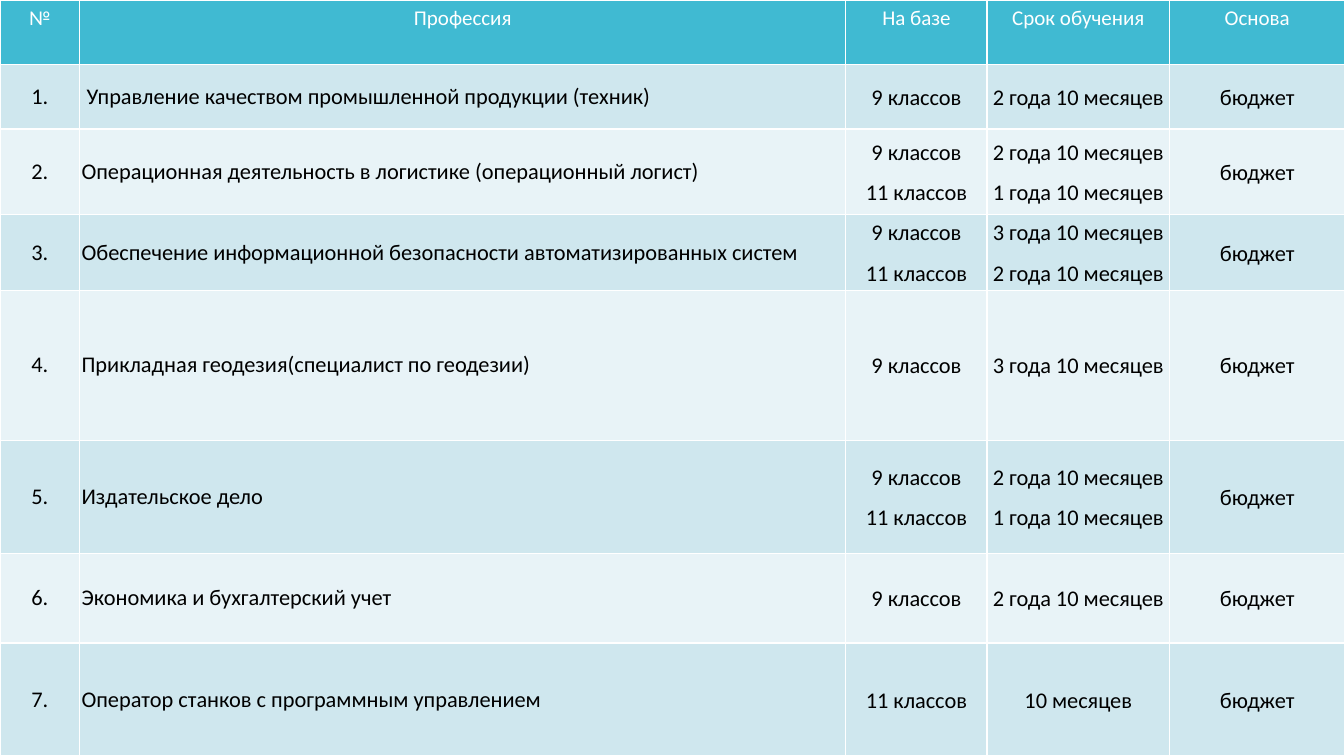
from lxml import etree
from pptx import Presentation
from pptx.dml.color import RGBColor
from pptx.enum.text import MSO_ANCHOR, PP_ALIGN
from pptx.oxml.ns import qn
from pptx.util import Inches, Pt

LEFT, CENTER = PP_ALIGN.LEFT, PP_ALIGN.CENTER
TOP, MIDDLE = MSO_ANCHOR.TOP, MSO_ANCHOR.MIDDLE
WHITE = RGBColor(0xFF, 0xFF, 0xFF)
BLACK = RGBColor(0x00, 0x00, 0x00)
HEADER_TEAL = RGBColor(0x40, 0xBA, 0xD2)
BANDS = (RGBColor(0xCF, 0xE7, 0xEE), RGBColor(0xE8, 0xF3, 0xF7))

COLUMN_WIDTHS = (0.79, 7.6, 1.4, 1.81, 1.74)
ROW_HEIGHTS = (0.64, 0.64, 0.85, 0.75, 1.49, 1.12, 0.89, 1.12)
# Alignment, cell margin (None keeps the default), paragraph format
COLUMN_FORMATS = (
    (CENTER, None, {}),
    (LEFT, 0.02, {}),
) + ((CENTER, 0, {"line_spacing": 1.07, "space_after": Pt(8)}),) * 3

HEADINGS = ("№", "Профессия", "На базе", "Срок обучения", "Основа")
PROGRAMMES = (
    (" Управление качеством промышленной продукции (техник)",
     "9 классов", "2 года 10 месяцев"),
    ("Операционная деятельность в логистике (операционный логист)",
     "9 классов\n11 классов", "2 года 10 месяцев\n1 года 10 месяцев"),
    ("Обеспечение информационной безопасности автоматизированных систем",
     "9 классов\n11 классов", "3 года 10 месяцев\n2 года 10 месяцев"),
    ("Прикладная геодезия(специалист по геодезии)",
     "9 классов", "3 года 10 месяцев"),
    ("Издательское дело",
     "9 классов\n11 классов", "2 года 10 месяцев\n1 года 10 месяцев"),
    ("Экономика и бухгалтерский учет", "9 классов", "2 года 10 месяцев"),
    ("Оператор станков с программным управлением",
     "11 классов", "10 месяцев"),
)


def add_borders(cell):
    properties = cell._tc.get_or_add_tcPr()
    for side in ("lnL", "lnR", "lnT", "lnB"):
        line = etree.SubElement(properties, qn(f"a:{side}"), w=str(Pt(1)))
        fill = etree.SubElement(line, qn("a:solidFill"))
        etree.SubElement(fill, qn("a:srgbClr"), val=str(WHITE))


def fill_cell(cell, text, background, anchor, alignment, font_format,
              margin=None, paragraph_format=None):
    add_borders(cell)
    cell.fill.solid()
    cell.fill.fore_color.rgb = background
    cell.vertical_anchor = anchor
    if margin is not None:
        for side in ("left", "right", "top", "bottom"):
            setattr(cell, f"margin_{side}", Inches(margin))
    cell.text_frame.text = text
    for paragraph in cell.text_frame.paragraphs:
        paragraph.alignment = alignment
        for name, value in (paragraph_format or {}).items():
            setattr(paragraph, name, value)
        font = paragraph.runs[0].font
        font.name = "Calibri"
        font.size, font.color.rgb = font_format


# Slide
presentation = Presentation()
presentation.slide_width = Inches(13.33)
presentation.slide_height = Inches(7.5)
slide = presentation.slides.add_slide(presentation.slide_layouts[6])

# Table grid over the whole slide
programme_table = slide.shapes.add_table(
    len(ROW_HEIGHTS), len(COLUMN_WIDTHS), 0, 0,
    presentation.slide_width, presentation.slide_height).table
for column, width in zip(programme_table.columns, COLUMN_WIDTHS):
    column.width = Inches(width)
for row, height in zip(programme_table.rows, ROW_HEIGHTS):
    row.height = Inches(height)

# Header row
for index, heading in enumerate(HEADINGS):
    fill_cell(programme_table.cell(0, index), heading, HEADER_TEAL, TOP,
              CENTER, (Pt(15), WHITE))

# Banded programme rows
for number, programme in enumerate(PROGRAMMES, start=1):
    values = (f"{number}.", *programme, "бюджет")
    band = BANDS[(number - 1) % 2]
    for index, (value, column_format) in enumerate(zip(values, COLUMN_FORMATS)):
        alignment, margin, paragraph_format = column_format
        fill_cell(programme_table.cell(number, index), value, band, MIDDLE,
                  alignment, (Pt(16), BLACK), margin, paragraph_format)

presentation.save("out.pptx")
